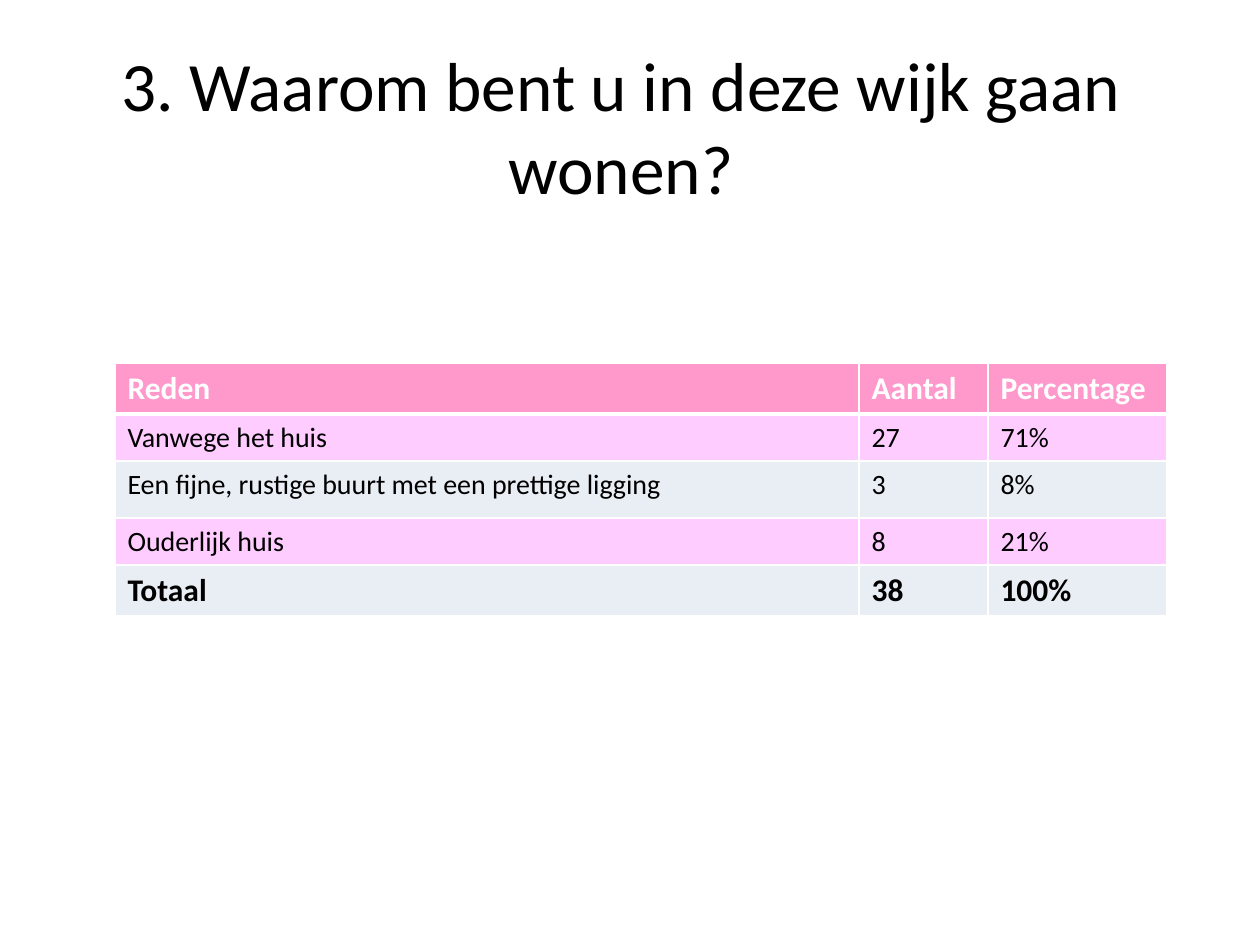
"""Build the slide with the survey table on reasons for moving to the neighbourhood."""
import lxml.etree
import pptx
import pptx.dml.color
import pptx.enum.text
import pptx.oxml.ns
import pptx.util

SCALE = 914400 / 126
WHITE, BLACK = "FFFFFF", "000000"
HEADER_PINK, ROW_PINK, ROW_GREY = "FF99CC", "FFCCFF", "E9EDF4"


def color(value):
    return pptx.dml.color.RGBColor.from_string(value)


def write_text(frame, text, size=16, bold=False, text_color=BLACK, align="LEFT"):
    frame.text = text
    paragraph = frame.paragraphs[0]
    paragraph.alignment = getattr(pptx.enum.text.PP_ALIGN, align)
    font = paragraph.runs[0].font
    font.name, font.size, font.bold = "Calibri", pptx.util.Pt(size), bold
    font.color.rgb = color(text_color)


presentation = pptx.Presentation()
presentation.slide_width = pptx.util.Inches(10)
presentation.slide_height = pptx.util.Inches(7.5)
slide = presentation.slides.add_slide(presentation.slide_layouts[5])

title = slide.shapes.title
title.left, title.top, title.width, title.height = [
    round(length * SCALE) for length in (54, 47, 1134, 157)
]
title.text_frame.word_wrap = True
title.text_frame.auto_size = pptx.enum.text.MSO_AUTO_SIZE.NONE
title.text_frame.vertical_anchor = pptx.enum.text.MSO_ANCHOR.MIDDLE
write_text(title.text_frame, "3. Waarom bent u in deze wijk gaan wonen?", size=39.6, align="CENTER")

rows = [
    ("Reden", "Aantal", "Percentage"),
    ("Vanwege het huis", "27", "71%"),
    ("Een fijne, rustige buurt met een prettige ligging", "3", "8%"),
    ("Ouderlijk huis", "8", "21%"),
    ("Totaal", "38", "100%"),
]
column_widths = [744, 129, 179]
row_heights = [50, 47, 57, 47, 50]
left, top, width, height = [
    round(length * SCALE) for length in (115, 363, sum(column_widths), sum(row_heights))
]
table = slide.shapes.add_table(len(rows), len(column_widths), left, top, width, height).table
for column, column_width in zip(table.columns, column_widths):
    column.width = round(column_width * SCALE)

for row_index, (values, row_height) in enumerate(zip(rows, row_heights)):
    table.rows[row_index].height = round(row_height * SCALE)
    is_header = row_index == 0
    is_total = row_index == len(rows) - 1
    row_fill = HEADER_PINK if is_header else ROW_PINK if row_index % 2 else ROW_GREY
    for column_index, value in enumerate(values):
        cell = table.cell(row_index, column_index)
        emphasis = is_header or is_total
        write_text(cell.text_frame, value, size=18 if emphasis else 16, bold=emphasis,
                   text_color=WHITE if is_header else BLACK)
        cell.fill.solid()
        cell.fill.fore_color.rgb = color(row_fill)
        properties = cell.fill._xPr
        for position, side in enumerate(("lnL", "lnR", "lnT", "lnB")):
            under_header = (is_header and side == "lnB") or (row_index == 1 and side == "lnT")
            border = lxml.etree.Element(pptx.oxml.ns.qn(f"a:{side}"))
            border.set("w", str(pptx.util.Pt(3 if under_header else 1)))
            border_fill = lxml.etree.SubElement(border, pptx.oxml.ns.qn("a:solidFill"))
            lxml.etree.SubElement(border_fill, pptx.oxml.ns.qn("a:srgbClr"), val=WHITE)
            properties.insert(position, border)

presentation.save("out.pptx")
